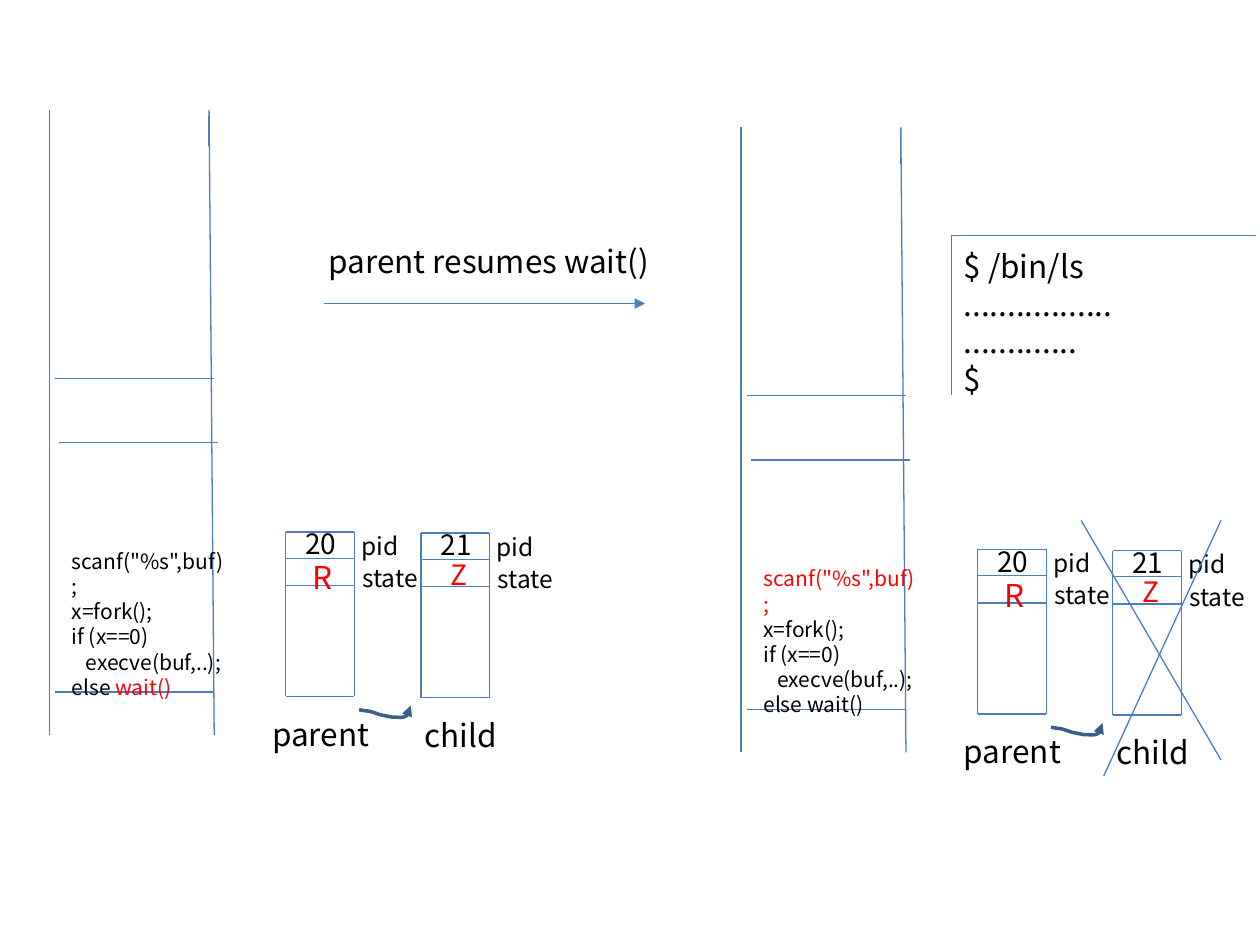
"""Build a slide showing a parent process resuming after its child ends."""
from pptx import Presentation
from pptx.dml.color import RGBColor
from pptx.enum import shapes, text
from pptx.oxml import ns, xmlchemy as xml
from pptx.util import Pt

FONT = "Noto Sans CJK KR"
HUES = {"line": "4B7EBC", "link": "3A5F8C", "ink": "000000", "hot": "FF0000"}
CODE = ['scanf("%s",buf);', "x=fork();", "if (x==0)", "execve(buf,..);"]


def tint(hue):
    """Return the named colour."""
    return RGBColor.from_string(HUES[hue])


def tip(shape):
    """Put a triangle at the end of a line."""
    end = xml.OxmlElement("a:tailEnd")
    end.set("type", "triangle")
    shape.element.spPr.find(ns.qn("a:ln")).append(end)


def rule(slide, x1, y1, x2, y2, arrow=False):
    """Draw a straight line."""
    line = slide.shapes.add_connector(
        shapes.MSO_CONNECTOR.STRAIGHT, Pt(x1), Pt(y1), Pt(x2), Pt(y2))
    line.line.color.rgb = tint("line")
    line.line.width = Pt(0.75)
    if arrow:
        tip(line)
    line.element.spPr.append(xml.OxmlElement("a:effectLst"))


def write(slide, words, x, y, w, h, size=18, hue="ink", inset=()):
    """Write paragraphs, each a string or a list of (text, hue) runs."""
    box = slide.shapes.add_textbox(Pt(x), Pt(y), Pt(w), Pt(h))
    frame = box.text_frame
    frame.word_wrap = True
    frame.auto_size = text.MSO_AUTO_SIZE.SHAPE_TO_FIT_TEXT
    rows = [words] if isinstance(words, str) else words
    for i, row in enumerate(rows):
        par = frame.paragraphs[0] if i == 0 else frame.add_paragraph()
        if i in inset:
            par._p.get_or_add_pPr().set("marL", str(Pt(8)))
        for part, tone in [(row, hue)] if isinstance(row, str) else row:
            run = par.add_run()
            run.text = part
            run.font.name = FONT
            run.font.size = Pt(size)
            run.font.color.rgb = tint(tone)


def curve(a, b, c, d, steps=8):
    """Return points along a cubic curve, after its start."""
    spots = []
    for i in range(1, steps + 1):
        t = i / steps
        s = 1 - t
        spots.append(tuple(
            s**3 * p + 3 * s * s * t * q + 3 * s * t * t * r + t**3 * e
            for p, q, r, e in zip(a, b, c, d)))
    return spots


def link(slide, x, y):
    """Draw the curved arrow from parent to child."""
    spots = curve((0, 2.4), (7.9, 3.8), (3.6, 2.4), (12.2, 5.3))
    spots += curve((15.8, 6.7), (23.8, 6), (26.6, 8.9), (29.5, 2.4))
    spots.append((29.5, 0))
    form = slide.shapes.build_freeform(Pt(x), Pt(y + 2.4))
    form.add_line_segments(
        [(Pt(x + a), Pt(y + b)) for a, b in spots], close=False)
    shape = form.convert_to_shape()
    shape.shadow.inherit = False
    shape.fill.background()
    shape.line.color.rgb = tint("link")
    shape.line.width = Pt(2)
    tip(shape)


def memory(slide, x, y, code):
    """Draw the memory column with its code."""
    rule(slide, x, y, x, y + 357.1)
    rule(slide, x + 91.4, y, x + 94.3, y + 357.1)
    for left, drop in ((3.6, 153.4), (5.8, 190.1), (3.6, 332.6)):
        rule(slide, x + left, y + drop, x + left + 90.7, y + drop)
    for left, end in ((0, 7.2), (91.4, 20.9)):
        rule(slide, x + left, y + 3.6, x + left, y + end)
    write(slide, code, x + 5.8, y + 247, 103, 79.9, size=12, inset=(3,))


def process(slide, x, y, pid):
    """Draw one process record with its labels."""
    wide, high = 39.2, 94
    for drop in (0, 15, 30.6, high):
        rule(slide, x, y + drop, x + wide, y + drop)
    for left in (x, x + wide):
        rule(slide, left, y, left, y + high)
    write(slide, "pid", x + 36.3, y - 4.3, 50.4, 24.5, size=14)
    write(slide, "state", x + 36.7, y + 14.2, 50.4, 24.5, size=14)
    write(slide, pid, x + 4.2, y - 6.6, 41, 26.6, size=16)


def scene(slide, x, y, code):
    """Draw the memory column and both processes."""
    memory(slide, x, y, code)
    process(slide, x + 135.2, y + 241.2, "20")
    process(slide, x + 212.4, y + 241.8, "21")
    write(slide, "R", x + 143.3, y + 252.7, 31, 28.8, hue="hot")
    write(slide, "Z", x + 222.5, y + 252, 31, 26.6, size=16, hue="hot")
    link(slide, x + 177.1, y + 340.4)
    write(slide, "parent", x + 120.3, y + 342, 87.1, 28.8)
    write(slide, "child", x + 207.4, y + 342.7, 87.1, 28.8)


def shell(slide, x, y):
    """Draw the terminal corner and its output."""
    rule(slide, x, y, x + 174.2, y)
    rule(slide, x, y, x, y + 91.4)
    write(slide, ["$ /bin/ls", "." * 17, "." * 13, "$"],
          x, y + 2.9, 154.1, 94.3)


def main():
    """Build and save the slide."""
    deck = Presentation()
    deck.slide_width, deck.slide_height = Pt(720), Pt(540)
    slide = deck.slides.add_slide(deck.slide_layouts[6])
    scene(slide, 28.1, 62.8, CODE + [[("else ", "ink"), ("wait()", "hot")]])
    scene(slide, 423.4, 72.8, [[(CODE[0], "hot")], *CODE[1:], "else wait()"])
    rule(slide, 185, 173.5, 368.6, 173.5, arrow=True)
    write(slide, "parent resumes wait()", 180.7, 134.6, 198, 28.8)
    rule(slide, 697.7, 297.4, 630.7, 443.5)
    rule(slide, 617.8, 297.4, 697.7, 434.2)
    shell(slide, 543.6, 134.6)
    deck.save("out.pptx")


if __name__ == "__main__":
    main()
